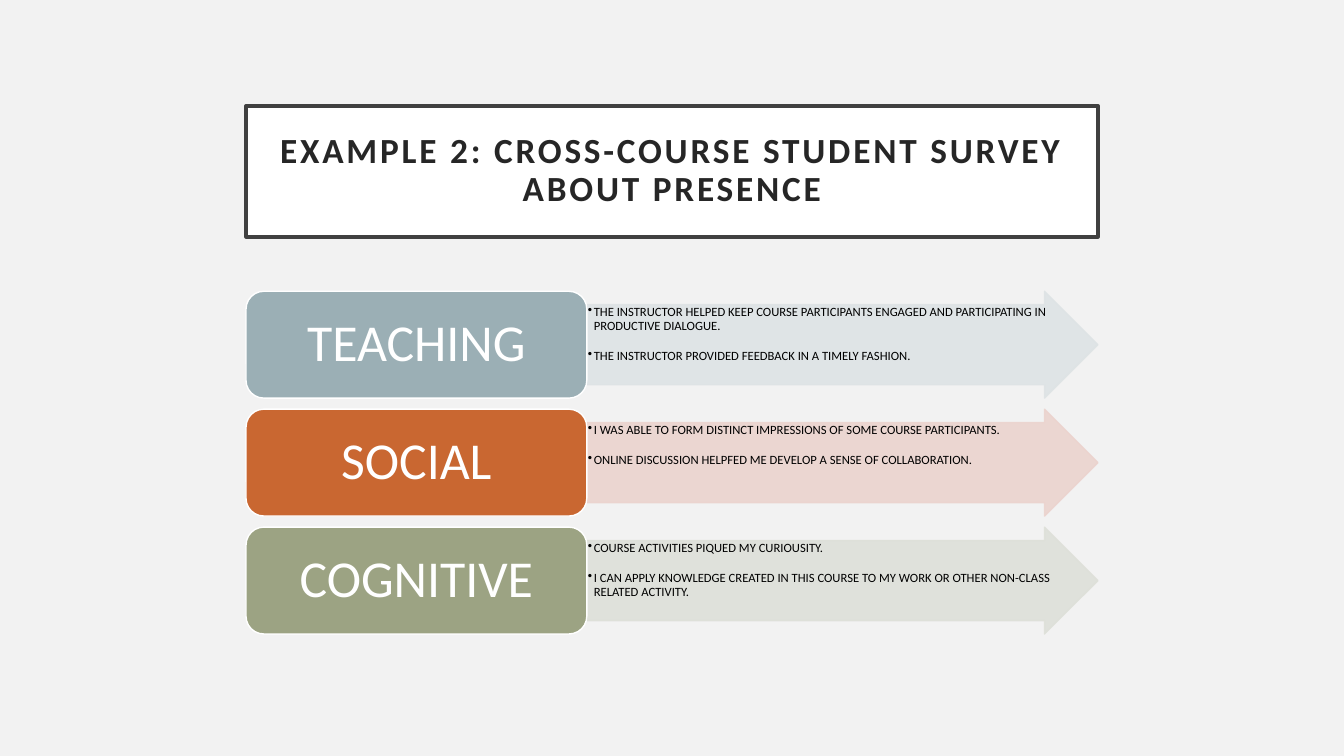
import pptx
import pptx.util
import pptx.dml.color
import pptx.enum.shapes
import pptx.enum.text
import pptx.oxml.ns
from lxml import etree

Inches = pptx.util.Inches
Pt = pptx.util.Pt
SHAPE = pptx.enum.shapes.MSO_SHAPE
ALIGN = pptx.enum.text.PP_ALIGN
ANCHOR = pptx.enum.text.MSO_ANCHOR
qn = pptx.oxml.ns.qn

COLORS = {
    "back": "F2F2F2", "white": "FFFFFF", "black": "000000",
    "frame": "404040", "title": "262626",
    "blue": "9BAFB5", "pale blue": "DEE3E5",
    "rust": "C96731", "pale rust": "EBD3CE",
    "green": "9CA383", "pale green": "DEE0D9",
}

ROWS = [
    ("TEACHING", "blue", [
        "THE INSTRUCTOR HELPED KEEP COURSE PARTICIPANTS ENGAGED AND "
        "PARTICIPATING IN PRODUCTIVE DIALOGUE.",
        "THE INSTRUCTOR PROVIDED FEEDBACK IN A TIMELY FASHION."]),
    ("SOCIAL", "rust", [
        "I WAS ABLE TO FORM DISTINCT IMPRESSIONS OF SOME COURSE PARTICIPANTS.",
        "ONLINE DISCUSSION HELPFED ME DEVELOP A SENSE OF COLLABORATION."]),
    ("COGNITIVE", "green", [
        "COURSE ACTIVITIES PIQUED MY CURIOUSITY.",
        "I CAN APPLY KNOWLEDGE CREATED IN THIS COURSE TO MY WORK OR OTHER "
        "NON-CLASS RELATED ACTIVITY."]),
]

LEFT, TOP, HEIGHT, STEP = 2.44, 2.89, 1.06, 1.17
LABEL, ARROW = 3.38, 5.07


class Deck:
    font = "Calibri"

    def __init__(self, wide, high):
        self.file = pptx.Presentation()
        self.file.slide_width = Inches(wide)
        self.file.slide_height = Inches(high)
        self.slide = self.file.slides.add_slide(self.file.slide_layouts[6])
        self.paint(self.slide.background.fill, "back")

    def paint(self, fill, color):
        fill.solid()
        fill.fore_color.rgb = pptx.dml.color.RGBColor.from_string(COLORS[color])

    def shape(self, kind, box, fill, line, width=1):
        item = self.slide.shapes.add_shape(kind, *map(Inches, box))
        item.shadow.inherit = False
        self.paint(item.fill, fill)
        self.paint(item.line.fill, line)
        item.line.width = Pt(width)
        return item

    def fade(self, item, alpha):
        """Set the opacity of fill and line in percent."""
        for tone in item.element.spPr.iter(qn("a:srgbClr")):
            etree.SubElement(tone, qn("a:alpha"), val=str(alpha * 1000))

    def frame(self, item, side, edge, anchor):
        """Set the text margins and anchor of a shape."""
        text = item.text_frame
        text.word_wrap = True
        text.vertical_anchor = anchor
        text.margin_left = text.margin_right = Inches(side)
        text.margin_top = text.margin_bottom = Inches(edge)
        return text

    def put(self, para, words, size, color, align, bold=False):
        """Add one styled run to a paragraph."""
        para.alignment = align
        para.line_spacing = 0.9
        run = para.add_run()
        run.text = words
        run.font.name = self.font
        run.font.size = Pt(size)
        run.font.bold = bold
        self.paint(run.font.fill, color)
        return run

    def title(self, words, box):
        item = self.shape(SHAPE.RECTANGLE, box, "white", "frame", 2.5)
        text = self.frame(item, 0.2, 0.2, ANCHOR.MIDDLE)
        run = self.put(text.paragraphs[0], words, 25.2, "title", ALIGN.CENTER, True)
        run._r.get_or_add_rPr().set("spc", "200")

    def arrow(self, points, box, color):
        item = self.shape(SHAPE.RIGHT_ARROW, box, color, color)
        item.adjustments[0] = 0.75
        self.fade(item, 90)
        text = self.frame(item, 0.01, 0.01, ANCHOR.TOP)
        for i, point in enumerate(points):
            para = text.add_paragraph() if i else text.paragraphs[0]
            self.put(para, point, 9, "black", ALIGN.LEFT)
            para.space_before = Pt(12 if i else 0)
            self.bullet(para, 0.06)

    def bullet(self, para, indent):
        props = para._p.get_or_add_pPr()
        props.set("marL", str(int(Inches(indent))))
        props.set("indent", str(-int(Inches(indent))))
        etree.SubElement(props, qn("a:buChar"), char="•")

    def label(self, words, box, color):
        item = self.shape(SHAPE.ROUNDED_RECTANGLE, box, color, "white")
        text = self.frame(item, 0.15, 0.08, ANCHOR.MIDDLE)
        self.put(text.paragraphs[0], words, 37, "white", ALIGN.CENTER)


def main():
    deck = Deck(13.33, 7.5)
    deck.title("EXAMPLE 2: CROSS-COURSE STUDENT SURVEY ABOUT PRESENCE",
               (LEFT, 1.05, LABEL + ARROW, 1.3))
    for i, (name, color, points) in enumerate(ROWS):
        top = TOP + i * STEP
        deck.arrow(points, (LEFT + LABEL, top, ARROW, HEIGHT), "pale " + color)
        deck.label(name, (LEFT, top, LABEL, HEIGHT), color)
    deck.file.save("out.pptx")


if __name__ == "__main__":
    main()
